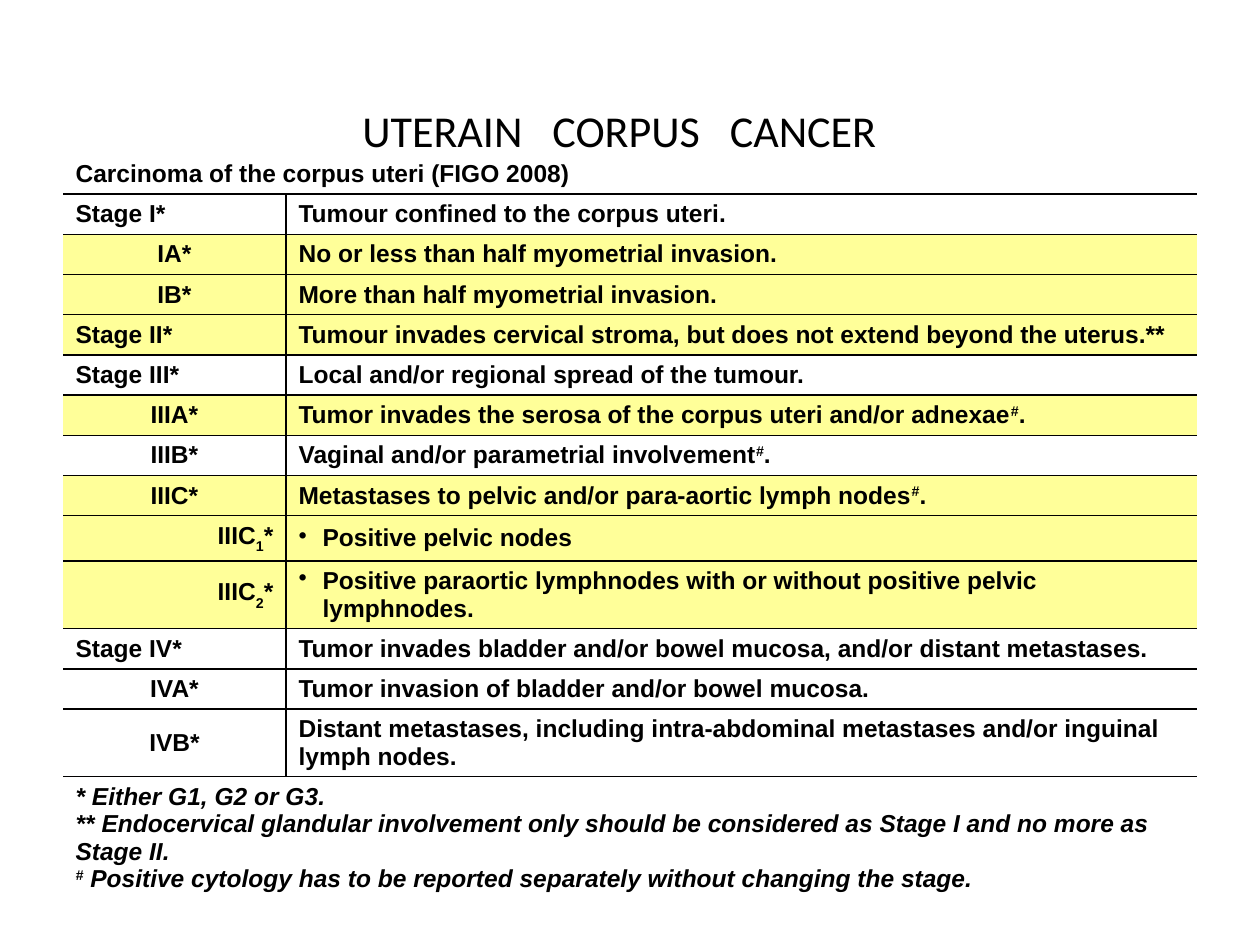
from dataclasses import dataclass

from lxml.etree import SubElement
from pptx import Presentation
from pptx.dml.color import RGBColor
from pptx.enum.text import MSO_ANCHOR as Anchor, MSO_AUTO_SIZE as AutoSize, PP_ALIGN as Align
from pptx.oxml.ns import qn
from pptx.util import Pt

TITLE = "UTERAIN   CORPUS   CANCER"
HEADING = "Carcinoma of the corpus uteri (FIGO 2008)"
MAIN, SUB, SUBSUB = Align.LEFT, Align.CENTER, Align.RIGHT
STAGES = [
    (MAIN, False, "Stage I*", "Tumour confined to the corpus uteri."),
    (SUB, True, "IA*", "No or less than half myometrial invasion."),
    (SUB, True, "IB*", "More than half myometrial invasion."),
    (MAIN, True, "Stage II*",
     "Tumour invades cervical stroma, but does not extend beyond the uterus.**"),
    (MAIN, False, "Stage III*", "Local and/or regional spread of the tumour."),
    (SUB, True, "IIIA*", "Tumor invades the serosa of the corpus uteri and/or adnexae|^#|."),
    (SUB, False, "IIIB*", "Vaginal and/or parametrial involvement|^#|."),
    (SUB, True, "IIIC*", "Metastases to pelvic and/or para-aortic lymph nodes|^#|."),
    (SUBSUB, True, "IIIC|_1|*", "Positive pelvic nodes"),
    (SUBSUB, True, "IIIC|_2|*",
     "Positive paraortic lymphnodes with or without positive pelvic lymphnodes."),
    (MAIN, False, "Stage IV*",
     "Tumor invades bladder and/or bowel mucosa, and/or distant metastases."),
    (SUB, False, "IVA*", "Tumor invasion of bladder and/or bowel mucosa."),
    (SUB, False, "IVB*",
     "Distant metastases, including intra-abdominal metastases and/or inguinal lymph nodes."),
]
FOOTNOTES = [
    "* Either G1, G2 or G3.",
    "** Endocervical glandular involvement only should be considered as Stage I"
    " and no more as Stage II.",
    "^#| Positive cytology has to be reported separately without changing the stage.",
]


@dataclass(frozen=True)
class Theme:
    text: RGBColor = RGBColor(0, 0, 0)
    highlight: RGBColor = RGBColor(0xFF, 0xFF, 0x99)
    rule: str = "010000"
    title_font: str = "Calibri"
    body_font: str = "Arial"
    title_size: float = 25.2
    body_size: float = 14
    rule_width: float = 1


THEME = Theme()
PX_PER_INCH = 126
SLIDE = (1260, 945)
TITLE_BOX = (336, 105, 567, 49)
TABLE_LEFT, TABLE_TOP = 63, 154
COLUMNS = (223, 911)
ROW_HEIGHT, FOOTNOTE_HEIGHT = 39, 84
BULLET_INDENT = 24
PLAIN_TABLE_STYLE = "{2D5ABB26-0587-4C30-8999-92F81FD0307C}"
BASELINES = {"^": "30000", "_": "-30000"}


def px(length):
    return round(length * 914400 / PX_PER_INCH)


def style(paragraph, font, size):
    paragraph.font.name = font
    paragraph.font.size = Pt(size)
    paragraph.font.color.rgb = THEME.text


def write(paragraph, marked_text, align=Align.LEFT, bullet=False, italic=False):
    if bullet:
        properties = paragraph._p.get_or_add_pPr()
        properties.set("marL", str(px(BULLET_INDENT)))
        properties.set("indent", str(-px(BULLET_INDENT)))
        SubElement(properties, qn("a:buChar"), char="•")
    paragraph.alignment = align
    style(paragraph, THEME.body_font, THEME.body_size)
    paragraph.font.bold = True
    if italic:
        paragraph.font.italic = True
    for part in marked_text.split("|"):
        run = paragraph.add_run()
        run.text = part.lstrip("^_")
        if part[0] in BASELINES:
            run._r.get_or_add_rPr().set("baseline", BASELINES[part[0]])


def dress(cell, sides, highlighted=False):
    cell.vertical_anchor = Anchor.MIDDLE
    properties = cell._tc.get_or_add_tcPr()
    for side in sides:
        line = SubElement(properties, qn(f"a:ln{side}"), w=str(Pt(THEME.rule_width)))
        SubElement(SubElement(line, qn("a:solidFill")), qn("a:srgbClr"), val=THEME.rule)
    if highlighted:
        cell.fill.solid()
        cell.fill.fore_color.rgb = THEME.highlight
    else:
        cell.fill.background()


def add_title(slide):
    title = slide.shapes.title
    title.left, title.top, title.width, title.height = map(px, TITLE_BOX)
    frame = title.text_frame
    frame.auto_size = AutoSize.NONE
    frame.vertical_anchor = Anchor.MIDDLE
    frame.text = TITLE
    frame.paragraphs[0].alignment = Align.CENTER
    style(frame.paragraphs[0], THEME.title_font, THEME.title_size)


def add_staging_table(slide):
    heights = [ROW_HEIGHT] * (len(STAGES) + 1) + [FOOTNOTE_HEIGHT]
    frame = slide.shapes.add_table(
        len(heights), len(COLUMNS),
        *map(px, (TABLE_LEFT, TABLE_TOP, sum(COLUMNS), sum(heights))))
    table = frame.table
    table.first_row = table.horz_banding = False
    table._tbl.tblPr.find(qn("a:tableStyleId")).text = PLAIN_TABLE_STYLE
    for column, width in zip(table.columns, COLUMNS):
        column.width = px(width)
    for row, height in zip(table.rows, heights):
        row.height = px(height)

    last = len(heights) - 1
    for row, side in ((0, "B"), (last, "T")):
        table.cell(row, 0).merge(table.cell(row, 1))
        for column in range(len(COLUMNS)):
            dress(table.cell(row, column), side)
    write(table.cell(0, 0).text_frame.paragraphs[0], HEADING)

    for row, (level, highlighted, stage, finding) in enumerate(STAGES, 1):
        label, description = table.cell(row, 0), table.cell(row, 1)
        dress(label, "RTB", highlighted)
        dress(description, "LTB", highlighted)
        write(label.text_frame.paragraphs[0], stage, level)
        write(description.text_frame.paragraphs[0], finding, bullet=level == SUBSUB)

    notes = table.cell(last, 0).text_frame
    for index, footnote in enumerate(FOOTNOTES):
        paragraph = notes.add_paragraph() if index else notes.paragraphs[0]
        write(paragraph, footnote, italic=True)


def main():
    deck = Presentation()
    deck.slide_width, deck.slide_height = map(px, SLIDE)
    slide = deck.slides.add_slide(deck.slide_layouts[5])
    add_title(slide)
    add_staging_table(slide)
    deck.save("out.pptx")


if __name__ == "__main__":
    main()
